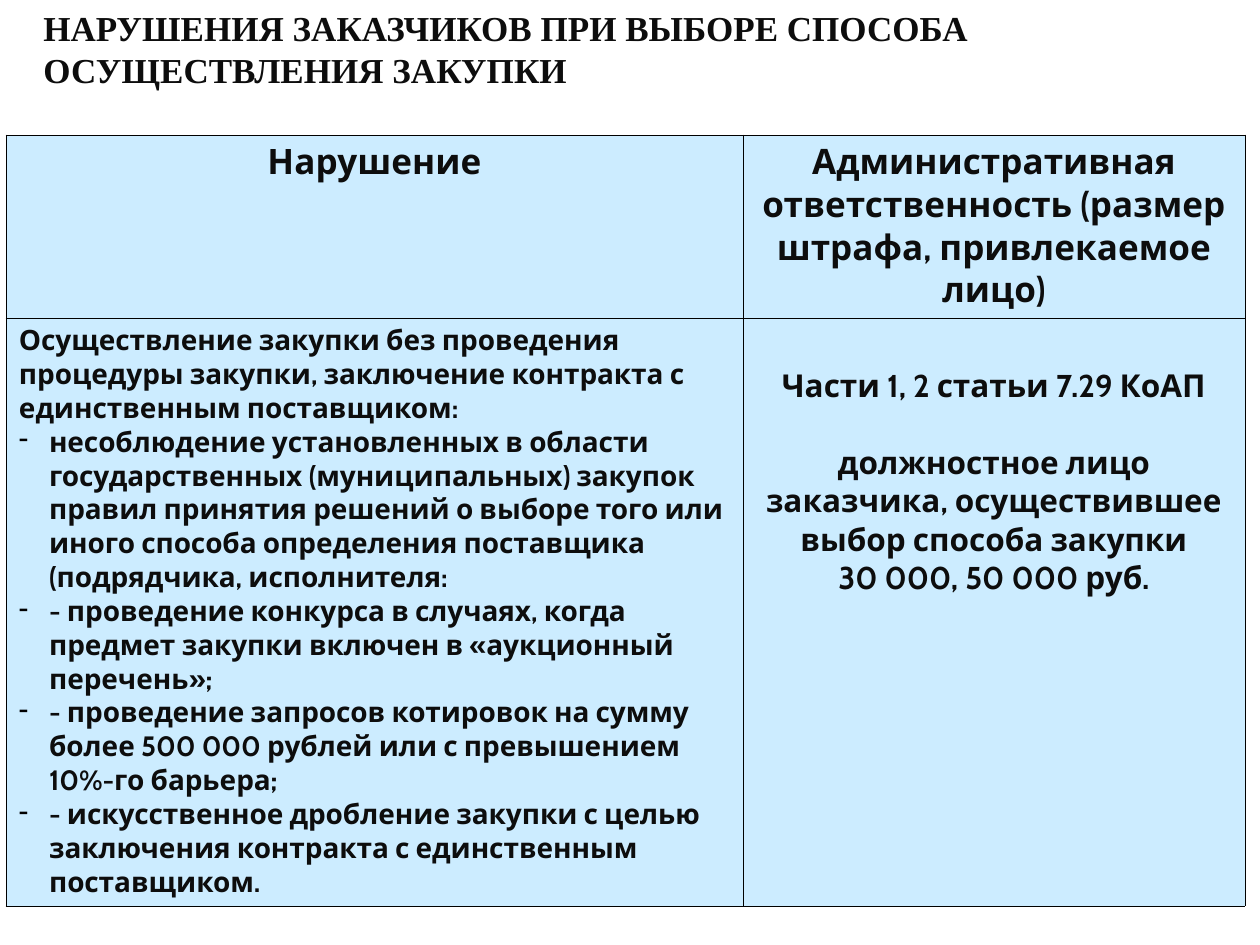
from dataclasses import dataclass

from lxml.etree import SubElement
from pptx import Presentation
from pptx.dml.color import RGBColor
from pptx.enum.text import PP_ALIGN
from pptx.oxml import parse_xml
from pptx.oxml.ns import nsdecls, qn
from pptx.util import Emu, Pt

EMU_PER_PX = 914400 / 126
COLORS = {"text": "0D0D0D", "cell": "CCECFF", "line": "000000"}
COLUMNS = [737, 502]
ROWS = [183, 588]
MARGIN_X, MARGIN_Y = 13, 6
INDENT = 30


@dataclass(frozen=True)
class Para:
    text: str
    size: int
    centered: bool = False
    bullet: bool = False
    space_before: int = 0


@dataclass(frozen=True)
class CellText:
    paras: list[Para]
    top: int = MARGIN_Y


CELLS = [
    [
        CellText([Para("Нарушение", 20, centered=True)]),
        CellText([Para("Административная ответственность (размер штрафа, "
                       "привлекаемое лицо)", 20, centered=True)]),
    ],
    [
        CellText([
            Para("Осуществление закупки без проведения процедуры закупки, "
                 "заключение контракта с единственным поставщиком:", 16),
            Para("несоблюдение установленных в области государственных "
                 "(муниципальных) закупок правил принятия решений о выборе "
                 "того или иного способа определения поставщика "
                 "(подрядчика, исполнителя:", 16, bullet=True),
            Para("- проведение конкурса в случаях, когда предмет закупки "
                 "включен в «аукционный перечень»;", 16, bullet=True),
            Para("- проведение запросов котировок на сумму более 500 000 "
                 "рублей или с превышением 10%-го барьера;", 16, bullet=True),
            Para("- искусственное дробление закупки с целью заключения "
                 "контракта с единственным поставщиком.", 16, bullet=True),
        ]),
        CellText([
            Para("Части 1, 2 статьи 7.29 КоАП", 18, centered=True),
            Para("должностное лицо заказчика, осуществившее выбор способа "
                 "закупки", 18, centered=True, space_before=22),
            Para("30 000, 50 000 руб.", 18, centered=True),
        ], top=49),
    ],
]


def px(value: int) -> Emu:
    return Emu(round(value * EMU_PER_PX))


def add_dash(p) -> None:
    pPr = p._p.get_or_add_pPr()
    pPr.set("marL", str(px(INDENT)))
    pPr.set("indent", str(-px(INDENT)))
    color = SubElement(pPr, qn("a:buClr"))
    SubElement(color, qn("a:srgbClr")).set("val", COLORS["line"])
    SubElement(pPr, qn("a:buChar")).set("char", "-")


def write(p, text: str, *, size: int, font: str = "Cabin", centered: bool = False,
          bullet: bool = False, space_before: int = 0) -> None:
    p.alignment = PP_ALIGN.CENTER if centered else PP_ALIGN.LEFT
    if space_before:
        p.space_before = Pt(space_before)
    if bullet:
        add_dash(p)
    r = p.add_run()
    r.text = text
    r.font.name = font
    r.font.size = Pt(size)
    r.font.bold = True
    r.font.color.rgb = RGBColor.from_string(COLORS["text"])


def set_borders(cell) -> None:
    tcPr = cell._tc.get_or_add_tcPr()
    for i, side in enumerate("LRTB"):
        tcPr.insert(i, parse_xml(
            f'<a:ln{side} {nsdecls("a")} w="{Pt(0.45)}"><a:solidFill>'
            f'<a:srgbClr val="{COLORS["line"]}"/></a:solidFill></a:ln{side}>'))


def fill_cell(cell, content: CellText) -> None:
    cell.margin_left = cell.margin_right = px(MARGIN_X)
    cell.margin_top, cell.margin_bottom = px(content.top), px(MARGIN_Y)
    cell.fill.solid()
    cell.fill.fore_color.rgb = RGBColor.from_string(COLORS["cell"])
    set_borders(cell)
    tf = cell.text_frame
    for i, para in enumerate(content.paras):
        p = tf.add_paragraph() if i else tf.paragraphs[0]
        write(p, para.text, size=para.size, centered=para.centered,
              bullet=para.bullet, space_before=para.space_before)


def add_title(slide) -> None:
    tf = slide.shapes.add_textbox(px(31), 0, px(1201), px(97)).text_frame
    tf.word_wrap = True
    write(tf.paragraphs[0],
          "НАРУШЕНИЯ ЗАКАЗЧИКОВ ПРИ ВЫБОРЕ СПОСОБА ОСУЩЕСТВЛЕНИЯ ЗАКУПКИ",
          size=20, font="Times New Roman")


def add_violations_table(slide) -> None:
    table = slide.shapes.add_table(
        len(ROWS), len(COLUMNS), px(6), px(135), px(sum(COLUMNS)), px(sum(ROWS))).table
    table.first_row = table.horz_banding = False
    for column, width in zip(table.columns, COLUMNS):
        column.width = px(width)
    for row, height, contents in zip(table.rows, ROWS, CELLS):
        row.height = px(height)
        for cell, content in zip(row.cells, contents):
            fill_cell(cell, content)


def main() -> None:
    prs = Presentation()
    prs.slide_width, prs.slide_height = px(1260), px(945)
    slide = prs.slides.add_slide(prs.slide_layouts[6])
    add_title(slide)
    add_violations_table(slide)
    prs.save("out.pptx")


if __name__ == "__main__":
    main()
